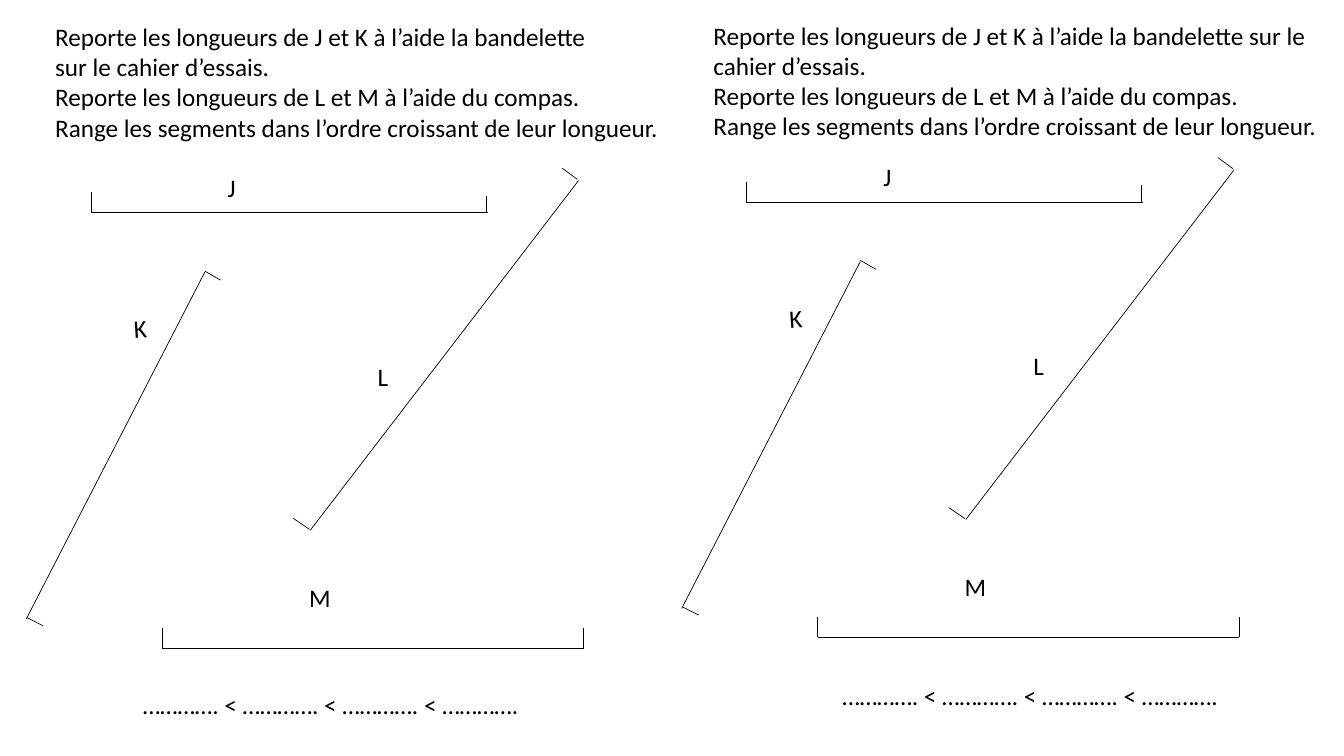
"""Build a two-copy worksheet on measuring and ordering four segments."""
from dataclasses import dataclass

from lxml.etree import SubElement
from pptx import Presentation
from pptx.dml.color import RGBColor
from pptx.enum.shapes import MSO_CONNECTOR
from pptx.enum.text import MSO_AUTO_SIZE
from pptx.oxml.ns import qn
from pptx.util import Cm, Pt


@dataclass(frozen=True)
class Theme:
    ink: RGBColor = RGBColor(0, 0, 0)
    font: str = "Calibri"
    text_size: Pt = Pt(18)
    line_width: Pt = Pt(0.5)


THEME = Theme()
PAGE_SIZE = (33.87, 19.05)
LABEL_HEIGHT = 1.02

SEGMENTS = [
    {"name": "K", "label": (3.12, 7.77, 0.84), "turn": -3.7,
     "lines": [((5.16, 6.86), (0.66, 15.6)), ((5.16, 6.83), (5.56, 7.06)),
               ((0.69, 15.57), (1.09, 15.77))]},
    {"name": "J", "label": (5.49, 4.22, 0.71), "turn": 0,
     "lines": [((2.29, 5.36), (12.29, 5.36)), ((2.29, 5.36), (2.29, 4.85)),
               ((12.25, 5.36), (12.25, 4.93))]},
    {"name": "L", "label": (9.27, 8.97, 0.79), "turn": 0,
     "lines": [((7.82, 13.36), (14.58, 4.55)), ((7.8, 13.34), (7.39, 13.06)),
               ((14.55, 4.52), (14.17, 4.24))]},
    {"name": "M", "label": (7.54, 14.55, 1.07), "turn": 0,
     "lines": [((4.09, 16.33), (14.71, 16.33)), ((4.09, 16.33), (4.09, 15.82)),
               ((14.71, 16.33), (14.71, 15.82))]},
]
COMMON_STEPS = [
    "Reporte les longueurs de L et M à l’aide du compas.",
    "Range les segments dans l’ordre croissant de leur longueur.",
]
SHEETS = [
    {"shift": (0, 0), "steps_at": (1.14, 0.41), "answer_at": (3.35, 17.25),
     "opening": ["Reporte les longueurs de J et K à l’aide la bandelette",
                 "sur le cahier d’essais."]},
    {"shift": (16.52, -0.27), "steps_at": (17.73, 0.38), "answer_at": (20.98, 17.02),
     "opening": ["Reporte les longueurs de J et K à l’aide la bandelette sur le",
                 "cahier d’essais."]},
]
STEPS_SIZE = (15.9, 3.33)
ANSWER_SIZE = (11.35, LABEL_HEIGHT)
ANSWER = " < ".join(["…………."] * 4)


def add_text(shapes, lines, position, size, wrap=False):
    box = shapes.add_textbox(*map(Cm, position + size))
    frame = box.text_frame
    frame.text = "\n".join(lines)
    frame.word_wrap = wrap
    frame.auto_size = MSO_AUTO_SIZE.SHAPE_TO_FIT_TEXT
    for para in frame.paragraphs:
        for span in para.runs:
            span.font.name = THEME.font
            span.font.size = THEME.text_size
            span.font.color.rgb = THEME.ink
    return box


def add_line(shapes, start, end):
    line = shapes.add_connector(MSO_CONNECTOR.STRAIGHT, *map(Cm, start + end))
    line.line.color.rgb = THEME.ink
    line.line.width = THEME.line_width
    SubElement(line._element.spPr, qn("a:effectLst"))


def add_sheet(page, sheet):
    across, down = sheet["shift"]

    def move(point):
        return point[0] + across, point[1] + down

    shapes = page.shapes.add_group_shape().shapes
    for segment in SEGMENTS:
        for start, end in segment["lines"]:
            add_line(shapes, move(start), move(end))
        left, top, width = segment["label"]
        label = add_text(shapes, [segment["name"]], move((left, top)), (width, LABEL_HEIGHT))
        label.rotation = segment["turn"]
    add_text(shapes, sheet["opening"] + COMMON_STEPS, sheet["steps_at"], STEPS_SIZE)
    add_text(page.shapes, [ANSWER], sheet["answer_at"], ANSWER_SIZE, wrap=True)


def main():
    deck = Presentation()
    deck.slide_width, deck.slide_height = map(Cm, PAGE_SIZE)
    page = deck.slides.add_slide(deck.slide_layouts[6])
    for sheet in SHEETS:
        add_sheet(page, sheet)
    deck.save("out.pptx")


if __name__ == "__main__":
    main()
